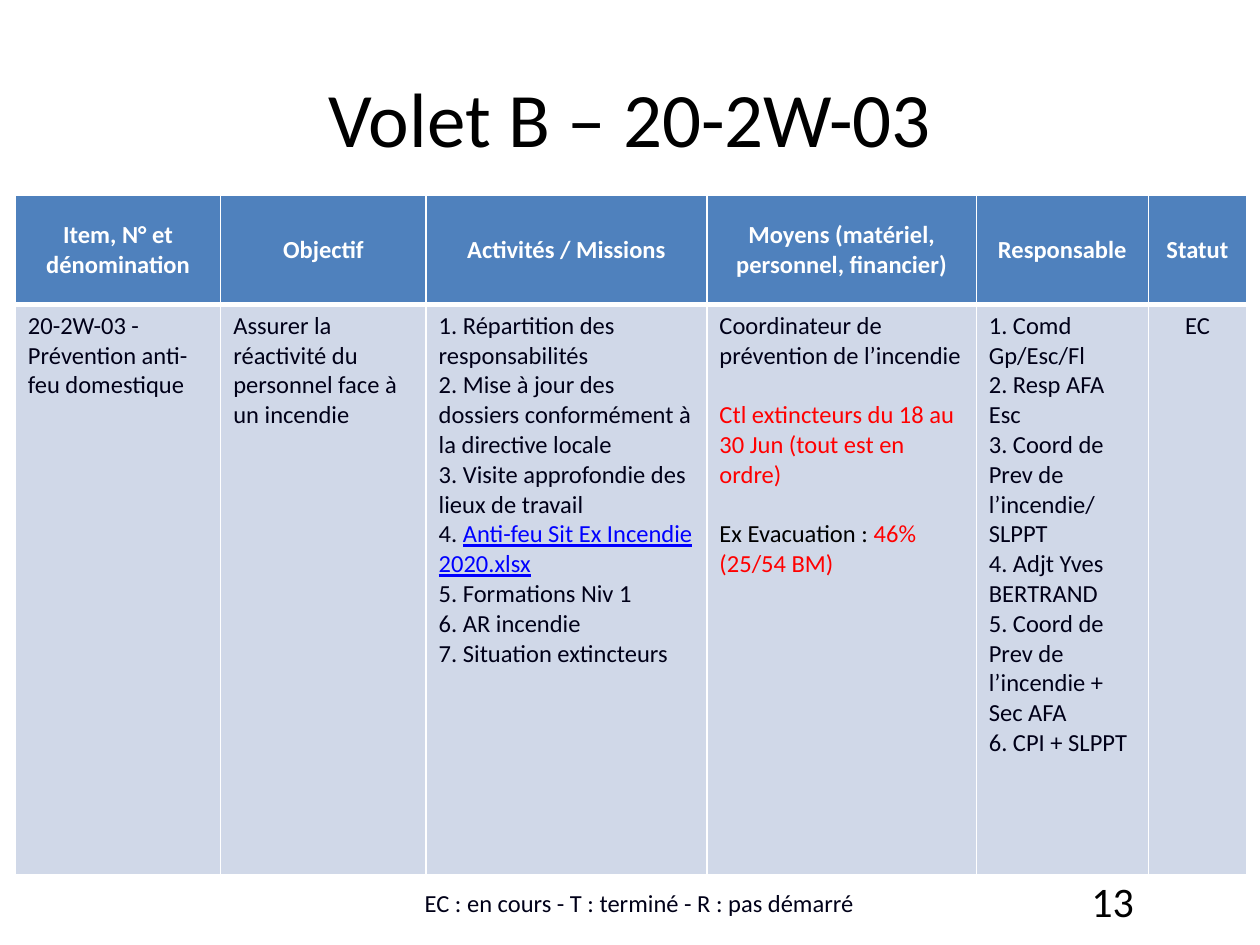
from dataclasses import dataclass

from lxml.etree import SubElement
from pptx import Presentation
from pptx.dml.color import RGBColor
from pptx.enum.text import MSO_ANCHOR, PP_ALIGN
from pptx.oxml.ns import qn
from pptx.util import Cm, Pt

COLOURS = {
    "black": "000000",
    "ink": "000018",
    "white": "FFFFFF",
    "header": "4F81BD",
    "body": "D0D8E8",
    "alert": "FF0000",
    "link": "0000FF",
}
FONT = "Calibri"
BODY_SIZE = 14
BLANK_LINE = Pt(17)


@dataclass
class Span:
    text: str
    colour: str = "ink"
    underline: bool = False
    bold: bool = False
    size: float = BODY_SIZE


@dataclass
class Line:
    spans: list[Span]
    align: PP_ALIGN = PP_ALIGN.LEFT
    numbered: bool = False
    gap_before: bool = False


@dataclass
class Column:
    heading: str
    width: float
    lines: list[Line]


@dataclass
class Label:
    line: Line
    left: float
    top: float
    width: float
    height: float
    anchor: MSO_ANCHOR = MSO_ANCHOR.MIDDLE


def plain(text: str) -> Line:
    return Line([Span(text)])


def numbered(*spans: Span) -> Line:
    return Line([Span(" "), *spans], numbered=True)


COLUMNS = [
    Column("Item, N° et dénomination", 4.14,
           [plain("20-2W-03 - Prévention anti-feu domestique")]),
    Column("Objectif", 4.14,
           [plain("Assurer la réactivité du personnel face à un incendie")]),
    Column("Activités / Missions", 5.66, [
        numbered(Span("Répartition des responsabilités")),
        numbered(Span("Mise à jour des dossiers conformément à la directive locale")),
        numbered(Span("Visite approfondie des lieux de travail")),
        numbered(Span("Anti-feu Sit Ex Incendie 2020.xlsx", "link", underline=True)),
        numbered(Span("Formations Niv 1")),
        numbered(Span("AR incendie")),
        numbered(Span("Situation extincteurs")),
    ]),
    Column("Moyens (matériel, personnel, financier)", 5.43, [
        plain("Coordinateur de prévention de l’incendie"),
        Line([Span("Ctl extincteurs du 18 au 30 Jun (tout est en ordre)", "alert")],
             gap_before=True),
        Line([Span("Ex Evacuation : ", "black"), Span("46% (25/54 BM)", "alert")],
             gap_before=True),
    ]),
    Column("Responsable", 3.47, [
        plain("1. Comd Gp/Esc/Fl\n2. Resp AFA Esc"),
        plain("3. Coord de Prev de l’incendie/\nSLPPT"),
        plain("4. Adjt Yves BERTRAND"),
        plain("5. Coord de Prev de l’incendie + Sec AFA"),
        plain("6. CPI + SLPPT"),
    ]),
    Column("Statut", 1.98, [Line([Span("EC")], PP_ALIGN.CENTER)]),
]
ROW_HEIGHTS = [2.2, 11.5]

LABELS = [
    Label(Line([Span("Volet B – 20-2W-03", "black", size=44)], PP_ALIGN.CENTER),
          1.27, 0.76, 22.86, 3.18),
    Label(Line([Span("13", "black", size=24)], PP_ALIGN.RIGHT),
          18.21, 17.65, 4.9, 1.02),
    Label(Line([Span("EC : en cours - T : terminé - R : pas démarré")], PP_ALIGN.CENTER),
          5.89, 17.65, 14, 0.97, MSO_ANCHOR.BOTTOM),
]


def rgb(name: str) -> RGBColor:
    return RGBColor.from_string(COLOURS[name])


def add_span(paragraph, span: Span) -> None:
    for index, part in enumerate(span.text.split("\n")):
        if index:
            paragraph.add_line_break()
        run = paragraph.add_run()
        run.text = part
        run.font.name = FONT
        run.font.size = Pt(span.size)
        run.font.bold = span.bold
        run.font.underline = span.underline
        run.font.color.rgb = rgb(span.colour)


def write_lines(frame, lines: list[Line]) -> None:
    for index, line in enumerate(lines):
        paragraph = frame.add_paragraph() if index else frame.paragraphs[0]
        paragraph.alignment = line.align
        if line.gap_before:
            paragraph.space_before = BLANK_LINE
        if line.numbered:
            properties = paragraph._p.get_or_add_pPr()
            properties.set("marL", "0")
            properties.set("indent", "0")
            SubElement(properties, qn("a:buFont"), typeface="+mj-lt")
            SubElement(properties, qn("a:buAutoNum"), type="arabicPeriod")
        paragraph.font.size = Pt(BODY_SIZE)
        for span in line.spans:
            add_span(paragraph, span)


def style_cell(cell, fill: str, bottom_width: float) -> None:
    """Draw white borders, then the fill, in the order the schema asks for."""
    properties = cell._tc.get_or_add_tcPr()
    for side, width in (("L", 1), ("R", 1), ("T", 1), ("B", bottom_width)):
        border = SubElement(properties, qn(f"a:ln{side}"), w=str(Pt(width)))
        solid = SubElement(border, qn("a:solidFill"))
        SubElement(solid, qn("a:srgbClr"), val=COLOURS["white"])
    cell.fill.solid()
    cell.fill.fore_color.rgb = rgb(fill)


def add_action_table(slide) -> None:
    width = sum(column.width for column in COLUMNS)
    table = slide.shapes.add_table(
        len(ROW_HEIGHTS), len(COLUMNS),
        Cm(0.31), Cm(3.94), Cm(width), Cm(sum(ROW_HEIGHTS))).table
    for row, height in zip(table.rows, ROW_HEIGHTS):
        row.height = Cm(height)
    for index, column in enumerate(COLUMNS):
        table.columns[index].width = Cm(column.width)
        heading, content = table.cell(0, index), table.cell(1, index)
        style_cell(heading, "header", 3)
        heading.vertical_anchor = MSO_ANCHOR.MIDDLE
        write_lines(heading.text_frame, [
            Line([Span(column.heading, "white", bold=True)], PP_ALIGN.CENTER)])
        style_cell(content, "body", 1)
        # The heading's thick rule is also the top edge of the content row.
        content._tc.tcPr.find(qn("a:lnT")).set("w", str(Pt(3)))
        write_lines(content.text_frame, column.lines)


def add_label(slide, label: Label) -> None:
    frame = slide.shapes.add_textbox(
        Cm(label.left), Cm(label.top), Cm(label.width), Cm(label.height)).text_frame
    frame.word_wrap = True
    frame.vertical_anchor = label.anchor
    write_lines(frame, [label.line])


def main() -> None:
    presentation = Presentation()
    presentation.slide_width, presentation.slide_height = Cm(25.4), Cm(19.05)
    slide = presentation.slides.add_slide(presentation.slide_layouts[6])
    add_action_table(slide)
    for label in LABELS:
        add_label(slide, label)
    presentation.save("out.pptx")


if __name__ == "__main__":
    main()
